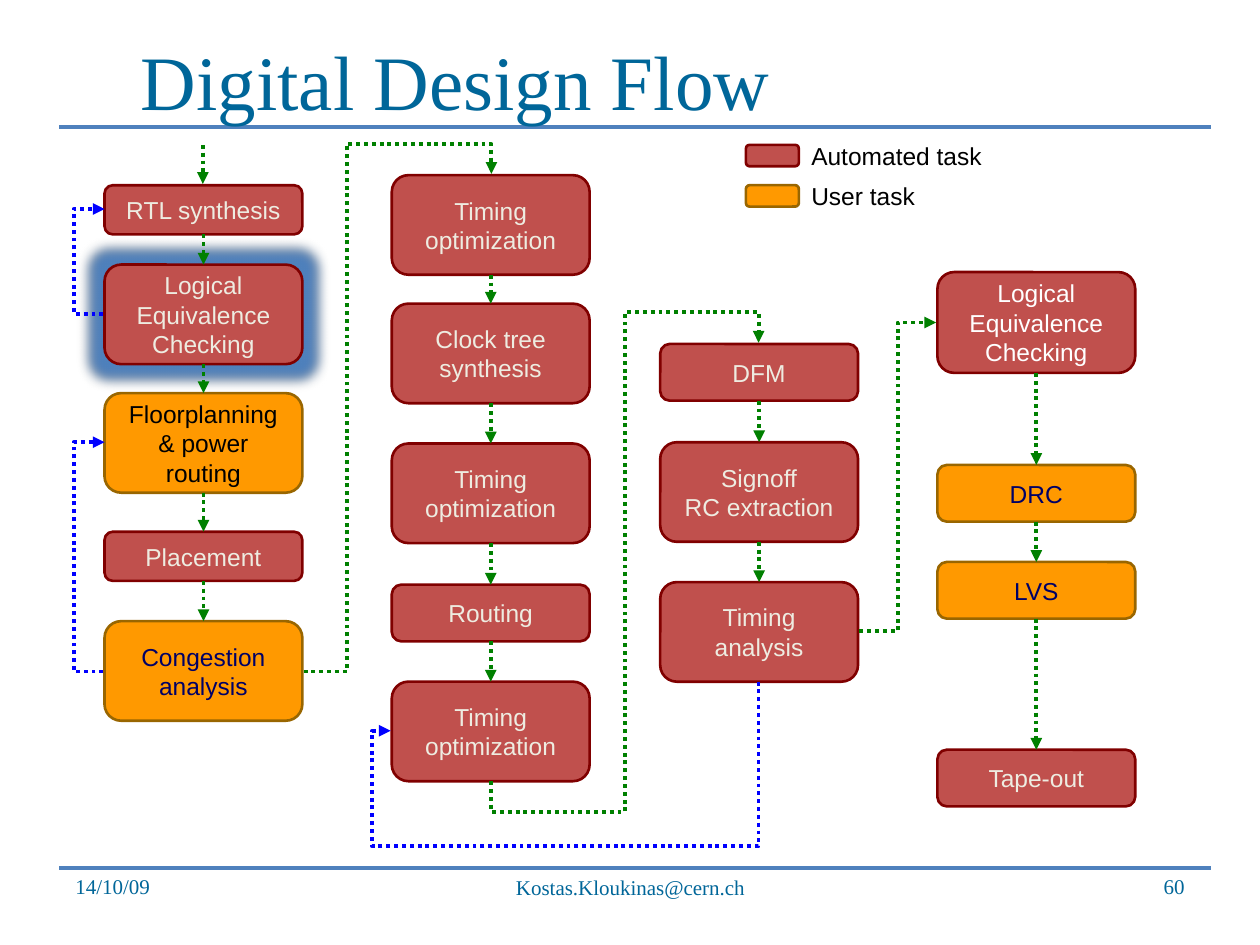
"""Build the digital design flow slide."""
from itertools import pairwise

from lxml.etree import SubElement
from pptx import Presentation
from pptx.dml.color import RGBColor
from pptx.enum.dml import MSO_LINE
from pptx.enum.shapes import MSO_CONNECTOR, MSO_SHAPE
from pptx.enum.text import MSO_ANCHOR, PP_ALIGN
from pptx.oxml.ns import qn
from pptx.util import Inches, Pt

AUTOMATED = {"fill": "C0504D", "line": "800000"}
USER = {"fill": "FF9900", "line": "996600"}
CREAM, NAVY, BLACK, WHITE = "EEECE1", "000066", "000000", "FFFFFF"
TEAL, GREEN, BLUE, RULE = "006699", "008000", "0000FF", "4F81BD"
BOX_WIDTH = 1.57
SANS = {"name": "Arial", "size": Pt(14)}
SERIF = {"name": "Times New Roman", "size": Pt(12)}
TITLE_FONT = {"name": "Times New Roman", "size": Pt(44)}

COLUMNS = [
    (0.83, [
        ("RTL synthesis", 1.47, 0.39, AUTOMATED, CREAM),
        ("Logical Equivalence Checking", 2.1, 0.79, AUTOMATED, CREAM),
        ("Floorplanning\n& power routing", 3.12, 0.79, USER, BLACK),
        ("Placement", 4.22, 0.39, AUTOMATED, CREAM),
        ("Congestion analysis", 4.93, 0.79, USER, NAVY),
    ]),
    (3.11, [
        ("Timing optimization", 1.39, 0.79, AUTOMATED, CREAM),
        ("Clock tree synthesis", 2.41, 0.79, AUTOMATED, CREAM),
        ("Timing optimization", 3.52, 0.79, AUTOMATED, CREAM),
        ("Routing", 4.64, 0.45, AUTOMATED, CREAM),
        ("Timing optimization", 5.41, 0.79, AUTOMATED, CREAM),
    ]),
    (5.24, [
        ("DFM", 2.73, 0.45, AUTOMATED, CREAM),
        ("Signoff\nRC extraction", 3.51, 0.79, AUTOMATED, CREAM),
        ("Timing analysis", 4.62, 0.79, AUTOMATED, CREAM),
    ]),
    (7.44, [
        ("Logical Equivalence Checking", 2.16, 0.8, AUTOMATED, WHITE),
        ("DRC", 3.69, 0.45, USER, NAVY),
        ("LVS", 4.46, 0.45, USER, NAVY),
        ("Tape-out", 5.95, 0.45, AUTOMATED, CREAM),
    ]),
]
HIGHLIGHTED = (0, 1)

ELBOWS = [
    ((0.82, 2.49), (0.83, 1.66), BLUE, False, [-24]),
    ((0.82, 5.33), (0.83, 3.51), BLUE, False, [-24]),
    ((2.41, 5.33), (3.9, 1.38), GREEN, False, [0.23, 1.06]),
    ((3.9, 6.2), (6.02, 2.72), GREEN, True, [-0.07, 0.5, 1.07]),
    ((6.02, 5.41), (3.1, 5.8), BLUE, True, [3.35, 1.05]),
    ((6.82, 5.01), (7.43, 2.56), GREEN, False, [0.5]),
]

LEGEND = [("Automated task", 1.15, AUTOMATED), ("User task", 1.47, USER)]

TEXTS = [
    ("Digital Design Flow", (1.02, 0.21, 8.44, 0.79), TITLE_FONT, PP_ALIGN.LEFT, 0),
    ("14/10/09", (0.5, 6.84, 2.33, 0.34), SERIF, PP_ALIGN.LEFT, 0.05),
    ("Kostas.Kloukinas@cern.ch", (3.42, 6.92, 3.17, 0.27), SERIF, PP_ALIGN.CENTER, 0.05),
    ("60", (7.17, 6.92, 2.33, 0.26), SERIF, PP_ALIGN.RIGHT, 0.05),
]


def color(value):
    return RGBColor.from_string(value)


def write(shape, text, font, font_color, alignment, anchor):
    frame = shape.text_frame
    frame.word_wrap = True
    frame.vertical_anchor = anchor
    frame.text = text
    for paragraph in frame.paragraphs:
        paragraph.alignment = alignment
        for name, value in font.items():
            setattr(paragraph.font, name, value)
        paragraph.font.color.rgb = color(font_color)


def add_box(slide, place, style):
    shape = slide.shapes.add_shape(MSO_SHAPE.ROUNDED_RECTANGLE, *map(Inches, place))
    shape.shadow.inherit = False
    shape.fill.solid()
    shape.fill.fore_color.rgb = color(style["fill"])
    shape.line.color.rgb = color(style["line"])
    shape.line.width = Pt(1.5)
    return shape


def add_glow(shape):
    effects = shape._element.spPr.find(qn("a:effectLst"))
    glow = SubElement(effects, qn("a:glow"), rad=str(Pt(14)))
    SubElement(glow, qn("a:srgbClr"), val=RULE)
    shadow = SubElement(effects, qn("a:outerShdw"), blurRad=str(Pt(5)), dist="0", rotWithShape="0")
    shade = SubElement(shadow, qn("a:srgbClr"), val=BLACK)
    SubElement(shade, qn("a:alpha"), val="43000")


def add_line(slide, begin, end, line_color, width, kind=MSO_CONNECTOR.STRAIGHT):
    connector = slide.shapes.add_connector(kind, *map(Inches, (*begin, *end)))
    connector.line.color.rgb = color(line_color)
    connector.line.width = Pt(width)
    SubElement(connector._element.spPr, qn("a:effectLst"))
    return connector


def add_arrow(slide, begin, end, line_color, kind=MSO_CONNECTOR.STRAIGHT):
    connector = add_line(slide, begin, end, line_color, 2.25, kind)
    connector.line.dash_style = MSO_LINE.ROUND_DOT
    SubElement(connector.line._get_or_add_ln(), qn("a:tailEnd"), type="triangle")
    return connector


def add_elbow(slide, begin, end, line_color, turned, bends):
    frame_begin, frame_end = begin, end
    if turned:
        middle_x, middle_y = (begin[0] + end[0]) / 2, (begin[1] + end[1]) / 2
        across, down = begin[0] - middle_x, begin[1] - middle_y
        frame_begin = (middle_x + down, middle_y - across)
        frame_end = (middle_x - down, middle_y + across)
    connector = add_arrow(slide, frame_begin, frame_end, line_color, MSO_CONNECTOR.ELBOW)
    properties = connector._element.spPr
    if turned:
        properties.find(qn("a:xfrm")).set("rot", str(90 * 60000))
    geometry = properties.find(qn("a:prstGeom"))
    geometry.set("prst", f"bentConnector{len(bends) + 2}")
    guides = geometry.find(qn("a:avLst"))
    for number, bend in enumerate(bends, 1):
        SubElement(guides, qn("a:gd"), name=f"adj{number}", fmla=f"val {round(bend * 100000)}")


def main():
    presentation = Presentation()
    presentation.slide_width, presentation.slide_height = Inches(10), Inches(7.5)
    slide = presentation.slides.add_slide(presentation.slide_layouts[6])

    for top in (1.01, 6.89):
        add_line(slide, (0.47, top), (9.61, top), RULE, 2)
    for text, place, font, alignment, bottom in TEXTS:
        box = slide.shapes.add_textbox(*map(Inches, place))
        box.text_frame.margin_bottom = Inches(bottom)
        write(box, text, font, TEAL, alignment, MSO_ANCHOR.BOTTOM)

    for column, (left, tasks) in enumerate(COLUMNS):
        boxes = []
        for row, (text, top, height, style, font_color) in enumerate(tasks):
            box = add_box(slide, (left, top, BOX_WIDTH, height), style)
            write(box, text, SANS, font_color, PP_ALIGN.CENTER, MSO_ANCHOR.MIDDLE)
            if (column, row) == HIGHLIGHTED:
                add_glow(box)
            boxes.append(box)
        for upper, lower in pairwise(boxes):
            arrow = add_arrow(slide, (0, 0), (0, 0), GREEN)
            arrow.begin_connect(upper, 2)
            arrow.end_connect(lower, 0)

    add_arrow(slide, (1.61, 1.15), (1.61, 1.46), GREEN)
    for elbow in ELBOWS:
        add_elbow(slide, *elbow)

    for text, top, style in LEGEND:
        add_box(slide, (5.92, top, 0.42, 0.17), style)
        label = slide.shapes.add_textbox(*map(Inches, (6.34, top, 1.65, 0.17)))
        write(label, text, SANS, BLACK, PP_ALIGN.LEFT, MSO_ANCHOR.MIDDLE)

    presentation.save("out.pptx")


if __name__ == "__main__":
    main()
